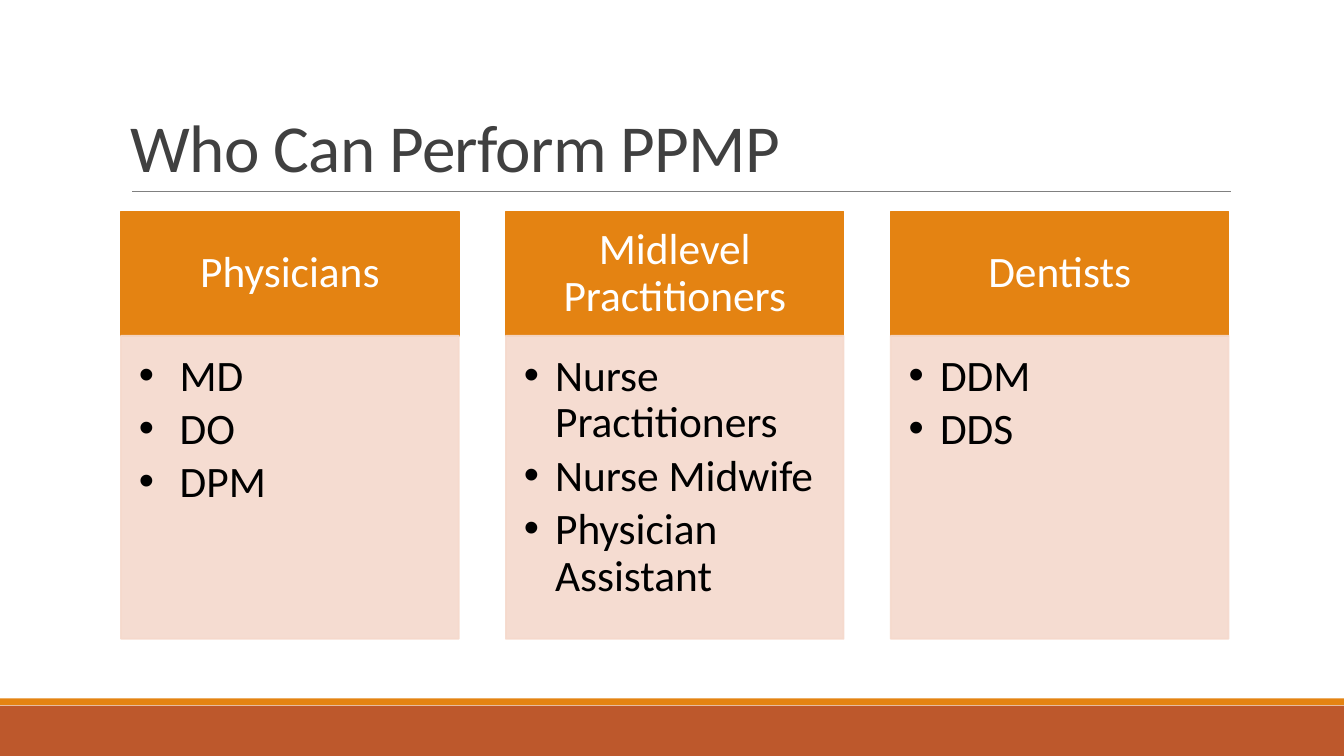
from lxml import etree
from pptx import Presentation, util as u
from pptx.dml.color import RGBColor
from pptx.enum import shapes, text
from pptx.oxml.ns import qn

TITLE = "Who Can Perform PPMP"
CARDS = [
    ("Physicians", ["MD", "DO", "DPM"], 1.03),
    ("Midlevel Practitioners",
     ["Nurse Practitioners", "Nurse Midwife", "Physician Assistant"], 0.79),
    ("Dentists", ["DDM", "DDS"], 0.79),
]
BANDS = [(17.78, 1.27, "BD582C"), (17.6, 0.17, "E48312")]
LEFT, WIDE, STEP = 3.05, 8.51, 9.7
TOP, HEAD, BODY = 5.33, 3.13, 7.64
HEADPAD = (0.6, 0.35, 0.6, 0.35)
BODYPAD = (0.45, 0.45, 0.6, 0.68)
TITLEPAD = (0.25, 0.13, 0.25, 0.13)
ALIGN, ANCHOR = text.PP_ALIGN, text.MSO_ANCHOR
HEADFMT = {"alignment": ALIGN.CENTER, "line_spacing": 0.9}
ITEMFMT = {"alignment": ALIGN.LEFT, "line_spacing": 0.9, "space_after": u.Pt(4.5)}
TITLEFMT = {"alignment": ALIGN.LEFT, "line_spacing": 0.85}


def paint(part, tone):
    part.rgb = RGBColor.from_string(tone)


def assign(part, vals):
    for key, val in vals.items():
        setattr(part, key, val)


def block(x, y, w, h, tone, edge=False, alpha=None):
    box = slide.shapes.add_shape(
        shapes.MSO_SHAPE.RECTANGLE, u.Cm(x), u.Cm(y), u.Cm(w), u.Cm(h))
    box.shadow.inherit = False
    box.fill.solid()
    paint(box.fill.fore_color, tone)
    if edge:
        paint(box.line.color, tone)
        box.line.width = u.Pt(1.25)
    else:
        box.line.fill.background()
    if alpha:
        for hue in box._element.spPr.iter(qn("a:srgbClr")):
            etree.SubElement(hue, qn("a:alpha"), val=str(alpha * 1000))
    return box


def write(box, lines, size, tone, fmt, pad, anchor, hang=None):
    frame = box.text_frame
    sides = ("margin_left", "margin_top", "margin_right", "margin_bottom")
    assign(frame, dict(zip(sides, map(u.Cm, pad))))
    assign(frame, {"word_wrap": True, "vertical_anchor": anchor})
    for i, line in enumerate(lines):
        para = frame.paragraphs[0] if i == 0 else frame.add_paragraph()
        assign(para, fmt)
        if hang:
            props = para._p.get_or_add_pPr()
            props.set("marL", str(u.Cm(hang)))
            props.set("indent", str(-u.Cm(hang)))
            etree.SubElement(props, qn("a:buFont"), typeface="Arial")
            etree.SubElement(props, qn("a:buChar"), char="•")
        run = para.add_run()
        run.text = line
        assign(run.font, {"name": "Calibri", "size": u.Pt(size)})
        paint(run.font.color, tone)


deck = Presentation()
assign(deck, {"slide_width": u.Cm(33.87), "slide_height": u.Cm(19.05)})
slide = deck.slides.add_slide(deck.slide_layouts[6])

for y, h, tone in BANDS:
    block(0, y, 33.87, h, tone)

rule = slide.shapes.add_connector(
    shapes.MSO_CONNECTOR.STRAIGHT, u.Cm(3.33), u.Cm(4.83), u.Cm(31.01), u.Cm(4.83))
paint(rule.line.color, "808080")
rule.line.width = u.Pt(0.5)
etree.SubElement(rule._element.spPr, qn("a:effectLst"))

title = slide.shapes.add_textbox(u.Cm(LEFT), u.Cm(0.79), u.Cm(27.94), u.Cm(4.04))
write(title, [TITLE], 48, "404040", TITLEFMT, TITLEPAD, ANCHOR.BOTTOM)
title.text_frame.paragraphs[0].runs[0].font._element.set("spc", "-50")

for i, (name, items, hang) in enumerate(CARDS):
    x = LEFT + i * STEP
    head = block(x, TOP, WIDE, HEAD, "E48312", True)
    write(head, [name], 31, "FFFFFF", HEADFMT, HEADPAD, ANCHOR.MIDDLE)
    body = block(x, TOP + HEAD, WIDE, BODY, "F5D9CC", True, 90)
    write(body, items, 31, "000000", ITEMFMT, BODYPAD, ANCHOR.TOP, hang)

deck.save("out.pptx")
